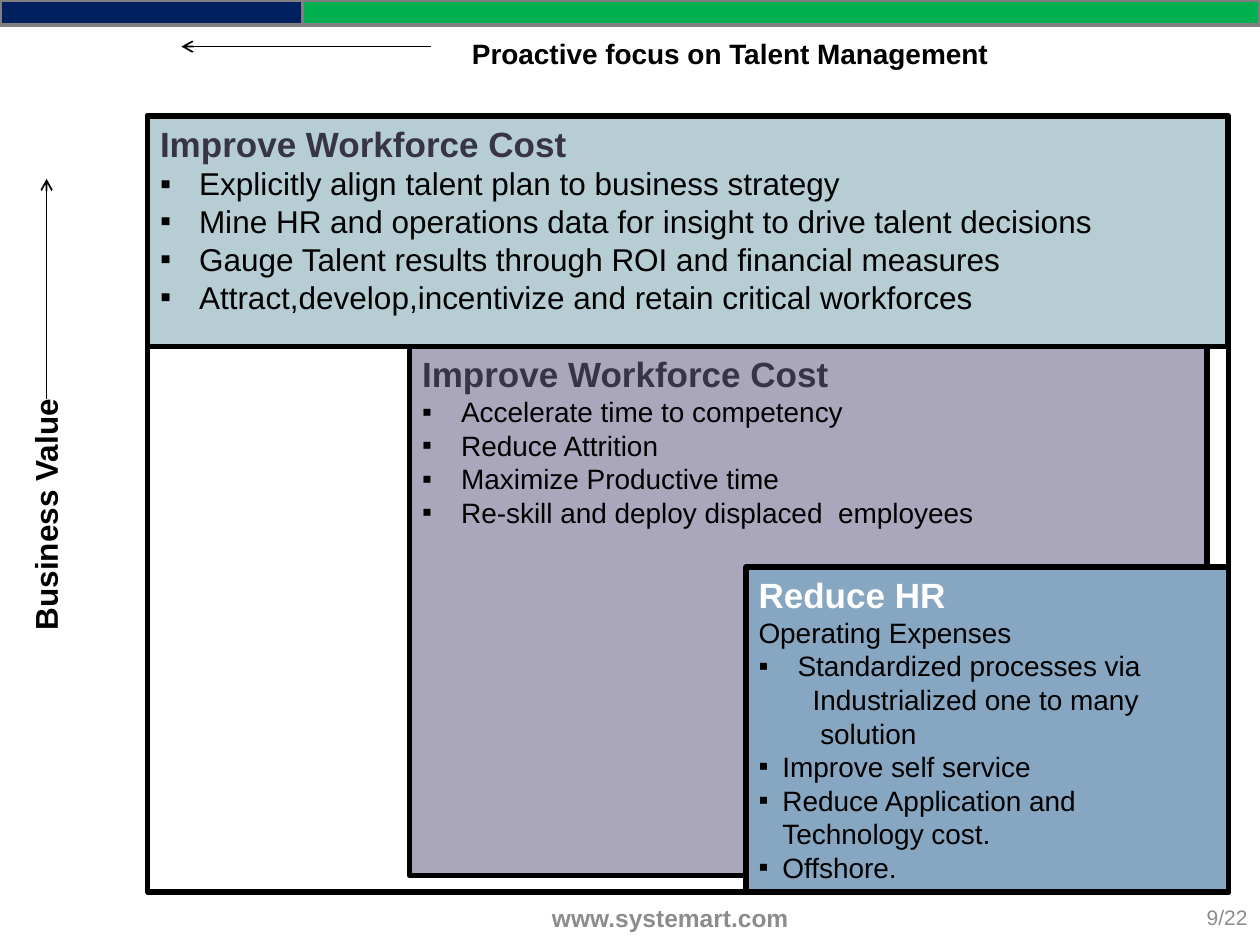
"""Build the talent management slide with nested business value panels."""
from dataclasses import dataclass
from typing import Optional

from lxml.etree import SubElement
from pptx import Presentation
from pptx.dml.color import RGBColor
from pptx.enum.shapes import MSO_CONNECTOR, MSO_SHAPE
from pptx.enum.text import MSO_ANCHOR, MSO_AUTO_SIZE, PP_ALIGN
from pptx.oxml.ns import qn
from pptx.util import Inches, Pt

RECTANGLE = MSO_SHAPE.RECTANGLE
STRAIGHT = MSO_CONNECTOR.STRAIGHT
TOP, MIDDLE = MSO_ANCHOR.TOP, MSO_ANCHOR.MIDDLE
NO_FIT = MSO_AUTO_SIZE.NONE
LEFT, CENTER, RIGHT = PP_ALIGN.LEFT, PP_ALIGN.CENTER, PP_ALIGN.RIGHT

BLACK = RGBColor(0x00, 0x00, 0x00)
WHITE = RGBColor(0xFF, 0xFF, 0xFF)
SLATE = RGBColor(0x37, 0x35, 0x45)
GRAY = RGBColor(0x80, 0x80, 0x80)
FOOTER_GRAY = RGBColor(0x8C, 0x8C, 0x8C)
GREEN = RGBColor(0x00, 0xB0, 0x50)
NAVY = RGBColor(0x00, 0x20, 0x60)
MAUVE = RGBColor(0xAA, 0xA7, 0xBC)
BLUE = RGBColor(0x86, 0xA6, 0xC1)
TEAL = RGBColor(0xB5, 0xCD, 0xD3)

WIDE, NARROW = 0.31, 0.19
Area = tuple[float, float, float, float]


@dataclass
class Item:
    text: str
    indent: float = WIDE
    bullet: bool = True


@dataclass
class Panel:
    area: Area
    fill: RGBColor
    heading: str
    heading_color: RGBColor
    size: int
    items: list[Item]


@dataclass
class Label:
    area: Area
    text: str
    size: int
    color: RGBColor = BLACK
    bold: bool = True
    align: PP_ALIGN = CENTER
    rotation: int = 0


PANELS = [
    Panel((3.25, 2.75, 6.33, 4.2), MAUVE, "Improve Workforce Cost", SLATE, 16, [
        Item("Accelerate time to competency"),
        Item("Reduce Attrition"),
        Item("Maximize Productive time"),
        Item("Re-skill and deploy displaced  employees"),
    ]),
    Panel((5.92, 4.5, 3.83, 2.58), BLUE, "Reduce HR", WHITE, 16, [
        Item("Operating Expenses", 0, False),
        Item("Standardized processes via"),
        Item("Industrialized one to many", 0.43, False),
        Item("solution", 0.49, False),
        Item("Improve self service", NARROW),
        Item("Reduce Application and Technology cost.", NARROW),
        Item("Offshore.", NARROW),
    ]),
    Panel((1.17, 0.92, 8.57, 1.83), TEAL, "Improve Workforce Cost", SLATE, 18, [
        Item("Explicitly align talent plan to business strategy"),
        Item("Mine HR and operations data for insight to drive talent decisions"),
        Item("Gauge Talent results through ROI and financial measures"),
        Item("Attract,develop,incentivize and retain critical workforces"),
    ]),
]

TITLE = Label((3.24, 0.21, 5.17, 0.43), "Proactive focus on Talent Management ", 16)
LABELS = [
    Label((-1.64, 3.96, 4, 0.25), "Business Value", 18, rotation=270),
    Label((3.51, 7.08, 3.62, 0.4), "www.systemart.com", 14, FOOTER_GRAY),
    Label((6.25, 7.08, 3.75, 0.4), "9/22", 12, FOOTER_GRAY, False, RIGHT),
]


def write(paragraph, text: str, *, size: int, color: RGBColor = BLACK,
          bold: bool = False, align: PP_ALIGN = LEFT,
          indent: float = 0, bullet: bool = False) -> None:
    paragraph.alignment = align
    paragraph.space_before = Pt(0)
    properties = paragraph._p.get_or_add_pPr()
    properties.set("marL", str(Inches(indent)))
    properties.set("indent", str(Inches(-indent if bullet else 0)))
    if bullet:
        SubElement(properties, qn("a:buChar")).set("char", "▪")
    else:
        SubElement(properties, qn("a:buNone"))
    run = paragraph.add_run()
    run.text = text
    run.font.name = "Arial"
    run.font.size = Pt(size)
    run.font.bold = bold
    run.font.color.rgb = color


def place(holder, area: Area) -> None:
    holder.left, holder.top, holder.width, holder.height = map(Inches, area)


def paint(shape, fill: Optional[RGBColor], line: RGBColor, width: float) -> None:
    if fill is None:
        shape.fill.background()
    else:
        shape.fill.solid()
        shape.fill.fore_color.rgb = fill
    shape.line.color.rgb = line
    shape.line.width = Pt(width)


def add_box(slide, area: Area, fill: Optional[RGBColor],
            line: RGBColor, width: float) -> None:
    box = slide.shapes.add_shape(RECTANGLE, *map(Inches, area))
    box.shadow.inherit = False
    paint(box, fill, line, width)


def prepare_text(holder, anchor: MSO_ANCHOR):
    frame = holder.text_frame
    frame.word_wrap = True
    frame.auto_size = NO_FIT
    frame.vertical_anchor = anchor
    return frame


def fill_panel(body, panel: Panel) -> None:
    place(body, panel.area)
    paint(body, panel.fill, BLACK, 3)
    frame = prepare_text(body, TOP)
    write(frame.paragraphs[0], panel.heading, size=20,
          color=panel.heading_color, bold=True)
    for item in panel.items:
        write(frame.add_paragraph(), item.text, size=panel.size,
              indent=item.indent, bullet=item.bullet)


def fill_label(holder, label: Label) -> None:
    place(holder, label.area)
    holder.rotation = label.rotation
    frame = prepare_text(holder, MIDDLE)
    write(frame.paragraphs[0], label.text, size=label.size, color=label.color,
          bold=label.bold, align=label.align)


def add_arrow(slide, start: tuple[float, float], end: tuple[float, float]) -> None:
    arrow = slide.shapes.add_connector(STRAIGHT, *map(Inches, start + end))
    arrow.line.color.rgb = BLACK
    arrow.line.width = Pt(1)
    SubElement(arrow.line._get_or_add_ln(), qn("a:tailEnd")).set("type", "arrow")
    SubElement(arrow._element.spPr, qn("a:effectLst"))


def main() -> None:
    deck = Presentation()
    deck.slide_width, deck.slide_height = Inches(10), Inches(7.5)
    slide = deck.slides.add_slide(deck.slide_layouts.get_by_name("Comparison"))
    title, *bodies, spare = slide.placeholders
    spare._element.getparent().remove(spare._element)

    fill_label(title, TITLE)
    for body, panel in zip(bodies, PANELS):
        fill_panel(body, panel)

    add_box(slide, (0, 0, 10, 0.2), GREEN, GRAY, 2)
    add_box(slide, (0, 0, 2.4, 0.2), NAVY, GRAY, 2)
    add_box(slide, (1.17, 0.92, 8.58, 6.16), None, BLACK, 3)
    for label in LABELS:
        fill_label(slide.shapes.add_textbox(*map(Inches, label.area)), label)
    add_arrow(slide, (0.37, 3.17), (0.37, 1.42))
    add_arrow(slide, (3.42, 0.37), (1.44, 0.37))
    deck.save("out.pptx")


if __name__ == "__main__":
    main()
